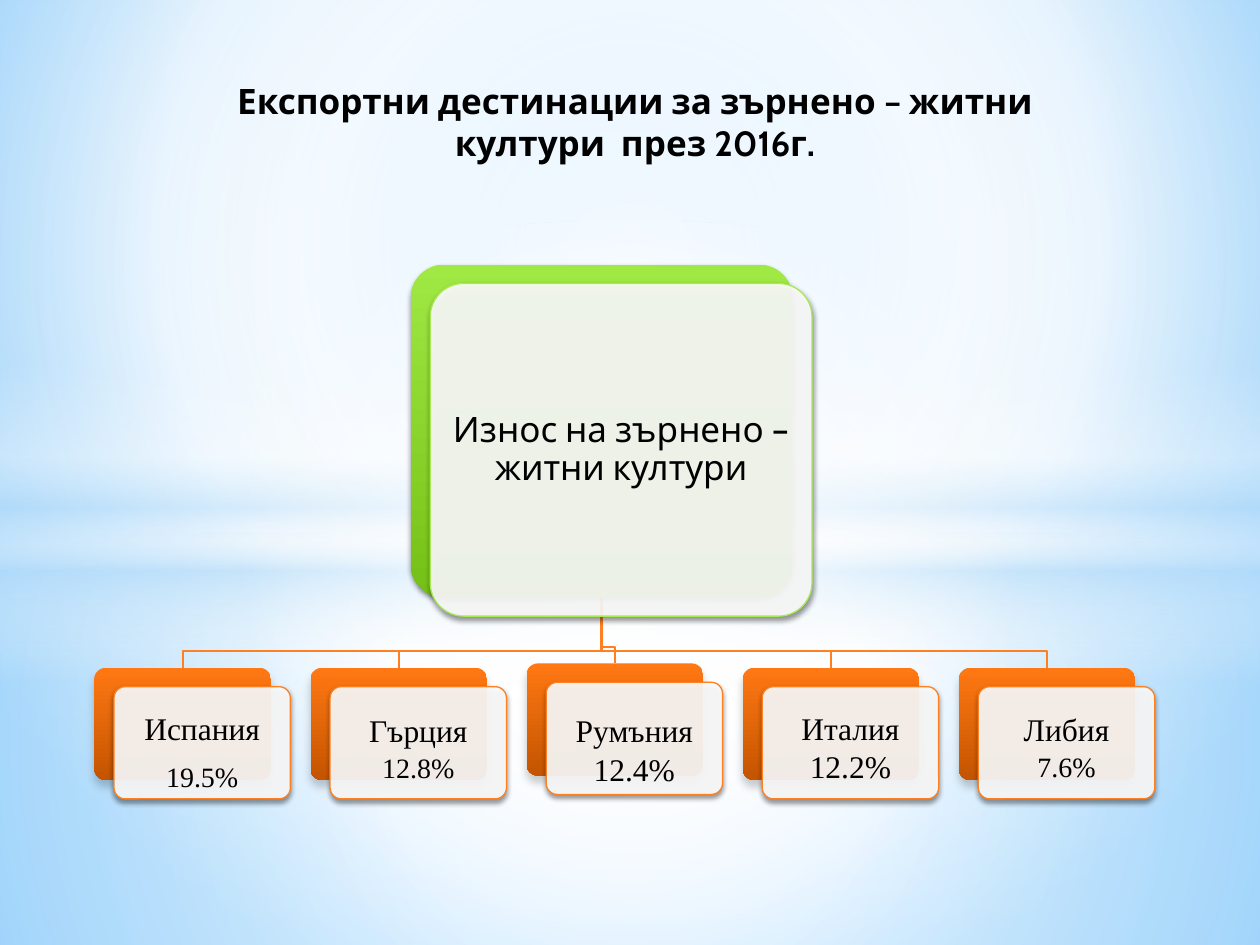
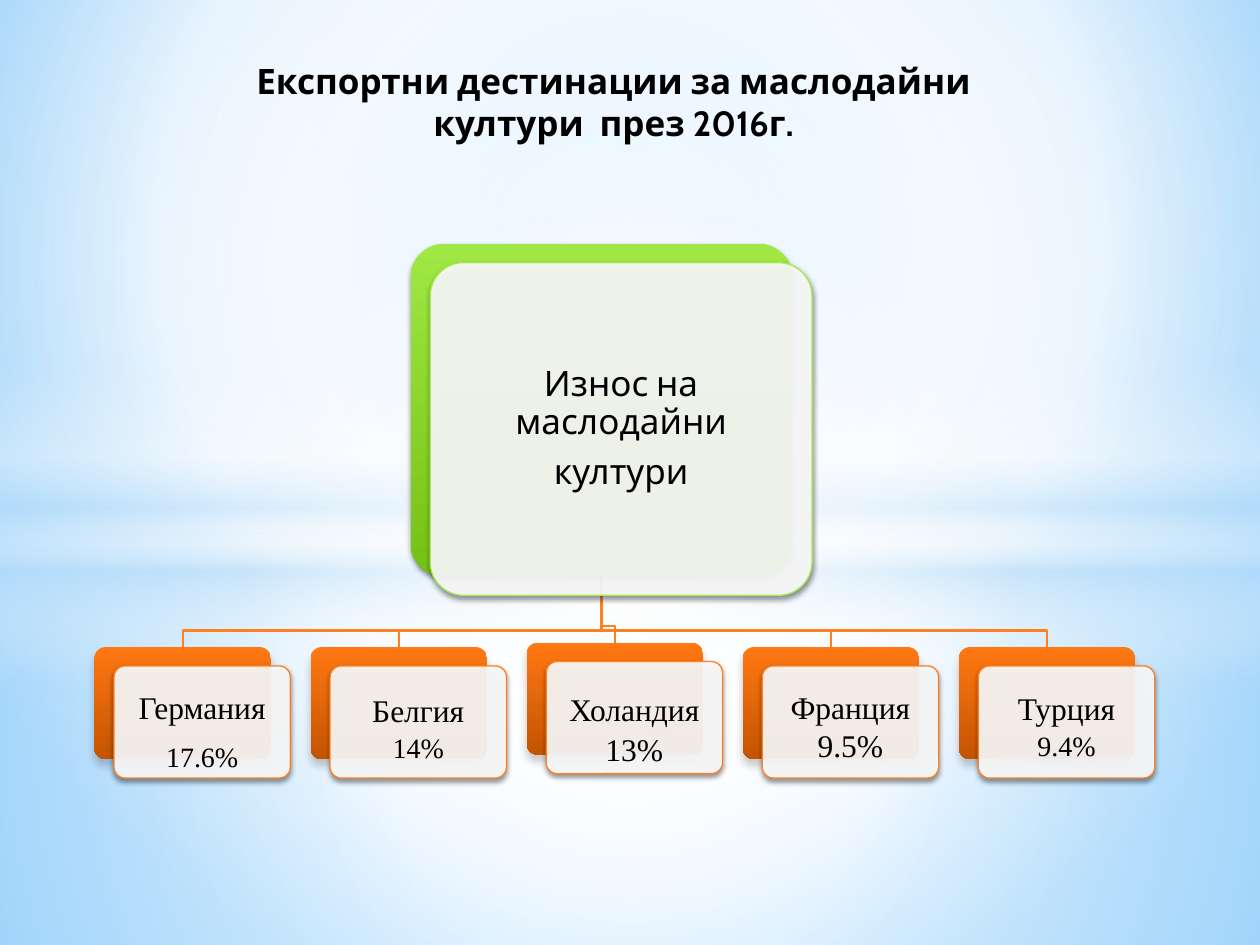
from lxml.etree import SubElement
from pptx import Presentation
from pptx.dml.color import RGBColor
from pptx.enum.shapes import MSO_SHAPE
from pptx.enum.text import MSO_ANCHOR, MSO_AUTO_SIZE, PP_ALIGN
from pptx.oxml import parse_xml
from pptx.oxml.ns import nsdecls, qn
from pptx.util import Inches, Pt

HEX = {
    "white": "FFFFFF", "black": "000000", "sky": "9ED5FF", "azure": "5BB9FF",
    "mist": "B4DCFA", "lime": "A0E844", "leaf": "75C016", "rim": "A7EA52",
    "flame": "FF7813", "rust": "C45400", "wire": "FF8021",
}
WIDE, HIGH = Inches(10), Inches(7.5)
COL, ROW = WIDE / 100, HIGH / 75
STEP_X, STEP_Y = 1.55, 1.5
HUB = (25.1, 0, 30.3, 26.4)
LEAF_ROW, PITCH, LEAF_W, LEAF_H = 32, 17.15, 14, 8.9
BEND = 1.3
SOFT, DEEP = (45, 3.1, 1.8), (20, 5, 4)
STYLES = [
    {"size": 16, "gap": 7.5, "top": 1.5},
    {"size": 16, "gap": 1, "top": 1.7},
    {"size": 18, "gap": 1, "top": 2, "lift": 0.35},
    {"size": 18, "gap": 0, "top": 1.5},
    {"size": 16, "gap": 1, "top": 1.6},
]
PAGES = [
    {
        "title": "Експортни дестинации за зърнено – житни култури  през 2016г.",
        "spot": (17.5, 5.8), "box": (7.5, 21),
        "hub": ["Износ на зърнено – житни култури"],
        "leaves": [("Испания", "19.5%"), ("Гърция", "12.8%"), ("Румъния", "12.4%"),
                   ("Италия", "12.2%"), ("Либия", "7.6%")],
    },
    {
        "title": "Експортни дестинации за маслодайни култури  през 2016г.",
        "spot": (15.8, 4.2), "box": (7.5, 19.35),
        "hub": ["Износ на маслодайни", "култури"],
        "leaves": [("Германия", "17.6%"), ("Белгия", "14%"), ("Холандия", "13%"),
                   ("Франция", "9.5%"), ("Турция", "9.4%")],
    },
]


def tint(name):
    return RGBColor.from_string(HEX[name])


def place(left, top, width, height):
    return [round(left * COL), round(top * ROW), round(width * COL), round(height * ROW)]


def blend(props, stops, focus=None):
    marks = "".join(
        f'<a:gs pos="{at * 1000}"><a:srgbClr val="{HEX[name]}">'
        f'<a:alpha val="{alpha * 1000}"/></a:srgbClr></a:gs>'
        for at, name, alpha in stops)
    if focus:
        sides = " ".join(f'{side}="{share * 1000}"' for side, share in zip("ltrb", focus))
        way = f'<a:path path="circle"><a:fillToRect {sides}/></a:path>'
    else:
        way = '<a:lin ang="5400000" scaled="0"/>'
    fill = parse_xml(f'<a:gradFill {nsdecls("a")} rotWithShape="1">'
                     f'<a:gsLst>{marks}</a:gsLst>{way}</a:gradFill>')
    props.replace(props.find(qn("a:noFill")), fill)


def shade(shape, alpha, blur, drop):
    shape.shadow.inherit = False
    cast = SubElement(shape.element.spPr.find(qn("a:effectLst")), qn("a:outerShdw"),
                      blurRad=str(Pt(blur)), dist=str(Pt(drop)), dir="5400000", rotWithShape="0")
    hue = SubElement(cast, qn("a:srgbClr"), val=HEX["black"])
    SubElement(hue, qn("a:alpha"), val=str(alpha * 1000))


def bare(slide, kind, box):
    shape = slide.shapes.add_shape(kind, *place(*box))
    shape.shadow.inherit = False
    shape.fill.background()
    shape.line.fill.background()
    return shape


def say(frame, lines, font="Cabin", sizes=(20, 20), bold=False, pitch=1.0, gap=0,
        anchor=MSO_ANCHOR.TOP, side=1, top=0.5):
    frame.word_wrap = True
    frame.auto_size = MSO_AUTO_SIZE.NONE
    frame.vertical_anchor = anchor
    frame.margin_left = frame.margin_right = round(side * COL)
    frame.margin_top = frame.margin_bottom = round(top * ROW)
    for i, (line, size) in enumerate(zip(lines, sizes)):
        para = frame.add_paragraph() if i else frame.paragraphs[0]
        para.alignment = PP_ALIGN.CENTER
        para.line_spacing = pitch
        para.space_before = Pt(0)
        para.space_after = Pt(gap if i < len(lines) - 1 else 0)
        run = para.add_run()
        run.text = line
        run.font.name = font
        run.font.size = Pt(size)
        run.font.bold = bold
        run.font.color.rgb = tint("black")


def card(slide, box, hues, rim, cast):
    left, top, width, height = box
    back = bare(slide, MSO_SHAPE.ROUNDED_RECTANGLE, box)
    blend(back.element.spPr, [(0, hues[0], 100), (100, hues[1], 100)])
    shade(back, *cast)
    front = bare(slide, MSO_SHAPE.ROUNDED_RECTANGLE,
                 (left + STEP_X, top + STEP_Y, width, height))
    front.fill.solid()
    front.fill.fore_color.rgb = tint("white")
    hue = front.element.spPr.find(qn("a:solidFill"))[0]
    SubElement(hue, qn("a:alpha"), val="90000")
    front.line.color.rgb = tint(rim)
    front.line.width = Pt(0.75)
    shade(front, *SOFT)
    for shape in (back, front):
        shape.adjustments[0] = 0.1
    return front.text_frame


def wire(slide, start, end):
    bend = end[1] - BEND
    spots = [(round(x * COL), round(y * ROW))
             for x, y in (start, (start[0], bend), (end[0], bend), end)]
    path = slide.shapes.build_freeform(*spots[0])
    path.add_line_segments(spots[1:], close=False)
    line = path.convert_to_shape()
    line.fill.background()
    line.line.color.rgb = tint("wire")
    line.line.width = Pt(1.25)
    line.shadow.inherit = False


def tree(slide, box, hub, leaves):
    left, top = box
    core = (left + HUB[0], top + HUB[1], HUB[2], HUB[3])
    root = (core[0] + core[2] / 2, core[1] + core[3])
    cells = [(left + i * PITCH, top + LEAF_ROW - style.get("lift", 0), LEAF_W, LEAF_H)
             for i, style in enumerate(STYLES)]
    for cell in cells:
        wire(slide, root, (cell[0] + LEAF_W / 2, cell[1]))
    frame = card(slide, core, ("lime", "leaf"), "rim", SOFT)
    say(frame, hub, pitch=0.9, gap=7, anchor=MSO_ANCHOR.MIDDLE, side=0.8, top=0.8)
    for cell, words, style in zip(cells, leaves, STYLES):
        frame = card(slide, cell, ("flame", "rust"), "wire", DEEP)
        say(frame, words, font="Times New Roman", sizes=(18, style["size"]),
            gap=style["gap"], side=0.7, top=style["top"])


def scene(master, slide):
    master.background.fill.background()
    props = next(master.element.iter(qn("p:bgPr")))
    blend(props, [(0, "sky", 100), (60, "white", 100), (100, "azure", 100)], (20, 10, 20, 60))
    mid = (50, 50, 50, 50)
    rect, oval = MSO_SHAPE.RECTANGLE, MSO_SHAPE.OVAL
    bands = [
        (rect, (0, 42.3, 100, 32.7),
         [(0, "white", 91), (37, "white", 76), (100, "mist", 79)], mid),
        (rect, (0, 0, 100, 42.3),
         [(0, "white", 89), (48, "white", 62), (100, "mist", 79)], mid),
        (rect, (0, 29, 100, 25),
         [(0, "white", 0), (29, "white", 30), (45, "mist", 40),
          (55, "white", 26), (65, "mist", 60), (100, "white", 0)], None),
        (oval, (0, 17.5, 100, 55.8), [(0, "white", 100), (54, "white", 0)], mid),
    ]
    for i, (kind, box, stops, focus) in enumerate(bands):
        band = bare(slide, kind, box)
        blend(band.element.spPr, stops, focus)
        band.element.nvSpPr.cNvPr.id = 20 + i
        master.shapes.element.insert(2 + i, band.element)


def build(slide, page):
    title = slide.shapes.title
    title.left, title.top, title.width, title.height = place(*page["spot"], 65.8, 7.7)
    say(title.text_frame, [page["title"]], bold=True)
    tree(slide, page["box"], page["hub"], page["leaves"])


def main():
    deck = Presentation()
    deck.slide_width, deck.slide_height = WIDE, HIGH
    slides = [deck.slides.add_slide(deck.slide_layouts[5]) for page in PAGES]
    scene(deck.slide_master, slides[0])
    for slide, page in zip(slides, PAGES):
        build(slide, page)
    deck.save("out.pptx")


if __name__ == "__main__":
    main()
